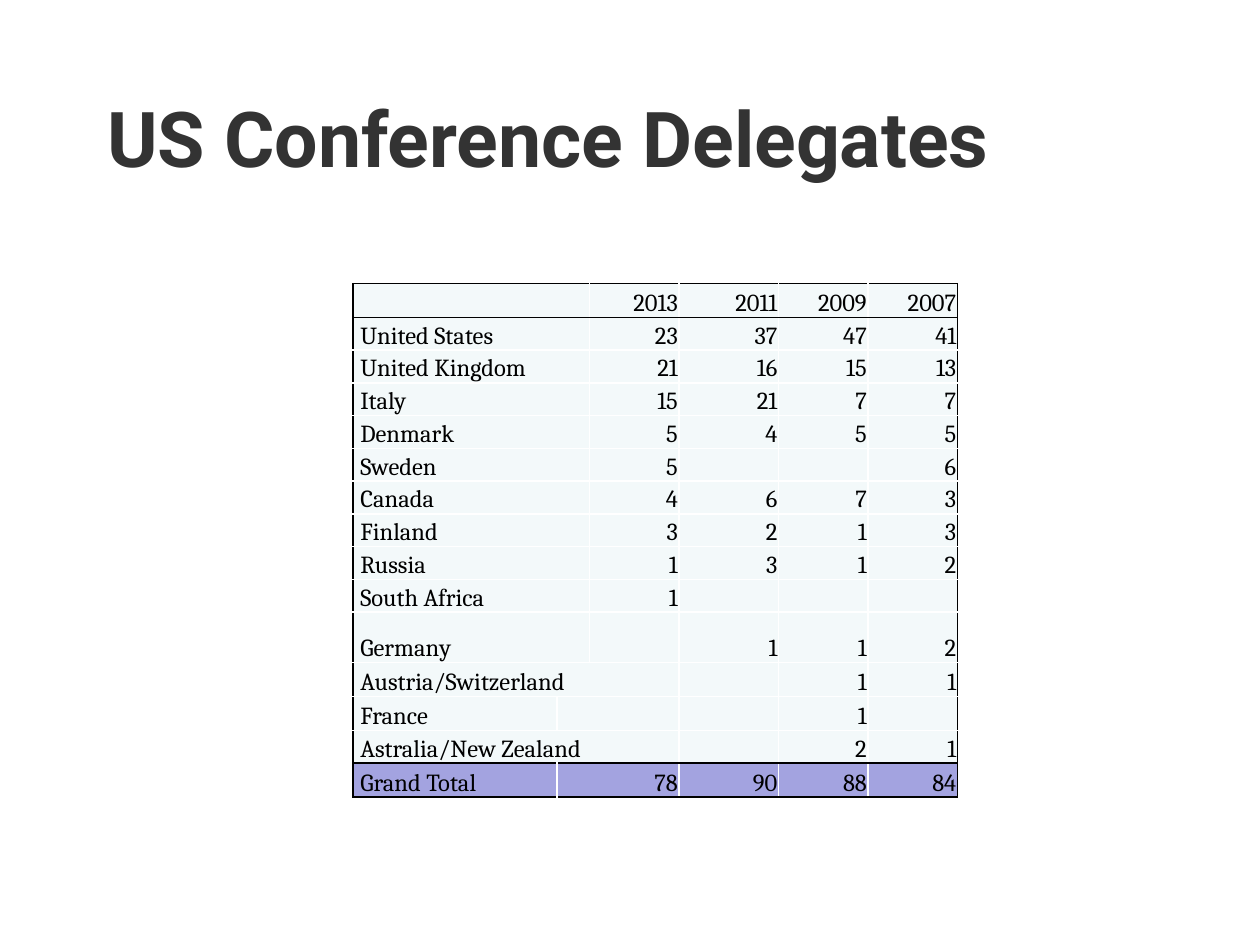
from typing import NamedTuple

import lxml.etree
import pptx
import pptx.dml.color
import pptx.enum.text
import pptx.oxml.ns
import pptx.util

Inches = pptx.util.Inches
Pt = pptx.util.Pt
qn = pptx.oxml.ns.qn

COLORS = {
    "title": "333333",
    "text": "000000",
    "frame": "000000",
    "grid": "FFFFFF",
    "body": "F3F9FA",
    "total": "A3A3E0",
}
TEXT_SIZE = 14
COLUMN_WIDTHS = [1.62, 0.26, 0.71, 0.79, 0.71, 0.71]
LABEL, NARROW = 0, 1
YEAR_COLUMNS = [2, 3, 4, 5]


class Delegation(NamedTuple):
    label: str
    counts: list[str]
    merged: tuple[int, int] = (0, 1)
    height: float = 0.26


ROWS = [
    Delegation("", ["2013", "2011", "2009", "2007"], height=0.27),
    Delegation("United States", ["23", "37", "47", "41"]),
    Delegation("United Kingdom", ["21", "16", "15", "13"]),
    Delegation("Italy", ["15", "21", "7", "7"]),
    Delegation("Denmark", ["5", "4", "5", "5"]),
    Delegation("Sweden", ["5", "", "", "6"]),
    Delegation("Canada", ["4", "6", "7", "3"]),
    Delegation("Finland", ["3", "2", "1", "3"]),
    Delegation("Russia", ["1", "3", "1", "2"]),
    Delegation("South Africa", ["1", "", "", ""]),
    Delegation("Germany", ["", "1", "1", "2"], height=0.4),
    Delegation("Austria/Switzerland", ["", "", "1", "1"], (0, 2), 0.27),
    Delegation("France", ["", "", "1", ""], (1, 2), 0.27),
    Delegation("Astralia/New Zealand", ["", "", "2", "1"], (0, 2)),
    Delegation("Grand Total", ["78", "90", "88", "84"], (1, 2), 0.27),
]
LAST_ROW = len(ROWS) - 1
LAST_COLUMN = len(COLUMN_WIDTHS) - 1


def rgb(name: str) -> pptx.dml.color.RGBColor:
    return pptx.dml.color.RGBColor.from_string(COLORS[name])


def add_title(page) -> None:
    title = page.shapes.title
    title.left, title.top = Inches(0.75), Inches(0.67)
    title.width, title.height = Inches(8.5), Inches(1.25)
    frame = title.text_frame
    frame.text = "US Conference Delegates"
    frame.vertical_anchor = pptx.enum.text.MSO_ANCHOR.TOP
    para = frame.paragraphs[0]
    para.alignment = pptx.enum.text.PP_ALIGN.LEFT
    font = para.runs[0].font
    font.name, font.size, font.bold = "Roboto", Pt(44), True
    font.color.rgb = rgb("title")


def draw_borders(cell, row: int, column: int) -> None:
    """Black around the table, its header and its total; white elsewhere."""
    framed = {
        "L": column == 0,
        "R": column == LAST_COLUMN,
        "T": row in (0, 1, LAST_ROW),
        "B": row in (0, LAST_ROW - 1, LAST_ROW),
    }
    properties = cell._tc.get_or_add_tcPr()
    for side, is_framed in framed.items():
        line = lxml.etree.SubElement(properties, qn(f"a:ln{side}"), w=str(Pt(1)))
        fill = lxml.etree.SubElement(line, qn("a:solidFill"))
        color = COLORS["frame" if is_framed else "grid"]
        lxml.etree.SubElement(fill, qn("a:srgbClr"), val=color)


def format_cell(cell, row: int, column: int) -> None:
    draw_borders(cell, row, column)
    cell.fill.solid()
    cell.fill.fore_color.rgb = rgb("total" if row == LAST_ROW else "body")
    cell.vertical_anchor = pptx.enum.text.MSO_ANCHOR.BOTTOM
    cell.margin_left = Inches(0.06 if column == LABEL else 0.01)
    cell.margin_top = cell.margin_right = Inches(0.01)
    cell.margin_bottom = 0


def write_cell(cell, text: str, is_label: bool) -> None:
    cell.text_frame.text = text
    para = cell.text_frame.paragraphs[0]
    align = pptx.enum.text.PP_ALIGN
    para.alignment = align.LEFT if is_label else align.RIGHT
    for span in para.runs:
        span.font.name, span.font.size = "Cambria", Pt(TEXT_SIZE)
        span.font.color.rgb = rgb("text")
    if not text:  # an empty cell would otherwise stretch its row
        lxml.etree.SubElement(para._p, qn("a:endParaRPr"), sz=str(TEXT_SIZE * 100))


def add_delegates_table(page) -> None:
    table = page.shapes.add_table(
        len(ROWS), len(COLUMN_WIDTHS), Inches(2.8), Inches(2.25),
        Inches(sum(COLUMN_WIDTHS)), Inches(sum(row.height for row in ROWS)),
    ).table
    table.first_row = table.horz_banding = False
    for column, width in zip(table.columns, COLUMN_WIDTHS):
        column.width = Inches(width)

    for row, delegation in enumerate(ROWS):
        table.rows[row].height = Inches(delegation.height)
        first, last = delegation.merged
        table.cell(row, first).merge(table.cell(row, last))
        texts = dict(zip(YEAR_COLUMNS, delegation.counts))
        texts[LABEL] = delegation.label
        # A count column swallowed by a merge is written in the merge's first cell.
        texts[NARROW] = texts[last] if first == NARROW else ""
        for column in range(len(COLUMN_WIDTHS)):
            cell = table.cell(row, column)
            format_cell(cell, row, column)
            text = "" if cell.is_spanned else texts[column]
            write_cell(cell, text, column == LABEL)


def main() -> None:
    deck = pptx.Presentation()
    deck.slide_width, deck.slide_height = Inches(10), Inches(7.5)
    page = deck.slides.add_slide(deck.slide_layouts.get_by_name("Title Only"))
    add_title(page)
    add_delegates_table(page)
    deck.save("out.pptx")


if __name__ == "__main__":
    main()
